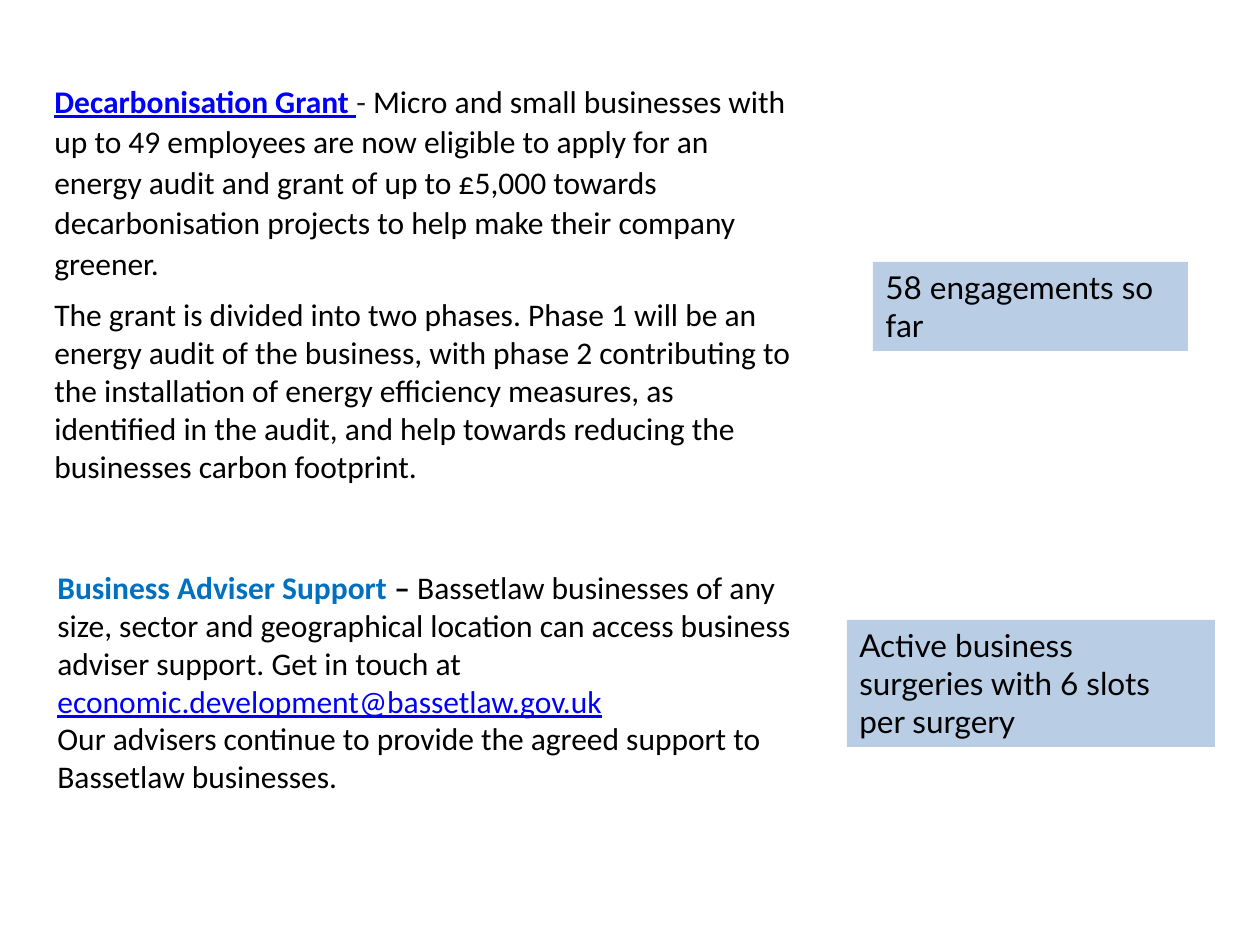
from pptx import Presentation
from pptx.dml.color import RGBColor
from pptx.enum.shapes import MSO_SHAPE as Shape
from pptx.enum.text import MSO_ANCHOR as Anchor, PP_ALIGN as Align
from pptx.util import Emu, Pt

PX_PER_INCH = 126
BLACK, LINK, BLUE, PANEL = "000000", "0000FF", "0070C0", "B9CDE5"


def px(length):
    return Emu(round(length * 914400 / PX_PER_INCH))


def colour(hex_string):
    return RGBColor.from_string(hex_string)


def add_span(para, text, fill=BLACK, font="Calibri", bold=False, underline=False):
    span = para.add_run()
    span.text = text
    span.font.name = font
    span.font.size = Pt(18)
    span.font.bold = bold
    span.font.underline = underline
    span.font.color.rgb = colour(fill)


def add_copy(page, box, paragraphs):
    """Text box; each paragraph is a list of (text, style) spans."""
    frame = page.shapes.add_textbox(*map(px, box)).text_frame
    frame.word_wrap = True
    for index, spans in enumerate(paragraphs):
        para = frame.add_paragraph() if index else frame.paragraphs[0]
        for text, style in spans:
            add_span(para, text, **style)
    return frame


def add_callout(page, box, text):
    """Filled panel with one statement."""
    panel = page.shapes.add_shape(Shape.RECTANGLE, *map(px, box))
    panel.shadow.inherit = False
    panel.fill.solid()
    panel.fill.fore_color.rgb = colour(PANEL)
    panel.line.fill.background()
    frame = panel.text_frame
    frame.word_wrap = True
    frame.vertical_anchor = Anchor.TOP
    para = frame.paragraphs[0]
    para.alignment = Align.LEFT
    add_span(para, text, font="Lato")


def add_grant(page, copy_box, callout_box):
    frame = add_copy(page, copy_box, [
        [("Decarbonisation Grant", dict(fill=LINK, bold=True, underline=True)),
         (" ", dict(fill=LINK, underline=True)),
         ("- ", dict(fill="1E2125")),
         ("Micro and small businesses with up to 49 employees are now eligible "
          "to apply for an energy audit and grant of up to £5,000 towards "
          "decarbonisation projects to help make their company greener.", {})],
        [("The grant is divided into two phases. Phase 1 will be an energy audit "
          "of the business, with phase 2 contributing to the installation of "
          "energy efficiency measures, as identified in the audit, and help "
          "towards reducing the businesses carbon footprint.", {})],
    ])
    frame.paragraphs[0].line_spacing = 1.07
    frame.paragraphs[0].space_after = Pt(8)
    add_callout(page, callout_box, "58 engagements so far")


def add_adviser(page, copy_box, callout_box):
    add_copy(page, copy_box, [
        [("Business Adviser Support ", dict(fill=BLUE, bold=True)),
         ("– ", dict(bold=True)),
         ("Bassetlaw businesses of any size, sector and geographical location "
          "can access business adviser support. Get in touch at ", {}),
         ("economic.development@bassetlaw.gov.uk",
          dict(fill=LINK, underline=True)),
         (" ", {})],
        [("Our advisers continue to provide the agreed support to Bassetlaw "
          "businesses.", {})],
    ])
    add_callout(page, callout_box,
                "Active business surgeries with 6 slots per surgery")


def main():
    deck = Presentation()
    deck.slide_width, deck.slide_height = px(1260), px(945)
    page = deck.slides.add_slide(deck.slide_layouts[6])
    # Upper region: grant
    add_grant(page, (42, 73, 766, 422), (873, 262, 315, 89))
    # Lower region: adviser support
    add_adviser(page, (45, 562, 786, 242), (847, 620, 368, 127))
    deck.save("out.pptx")


if __name__ == "__main__":
    main()
